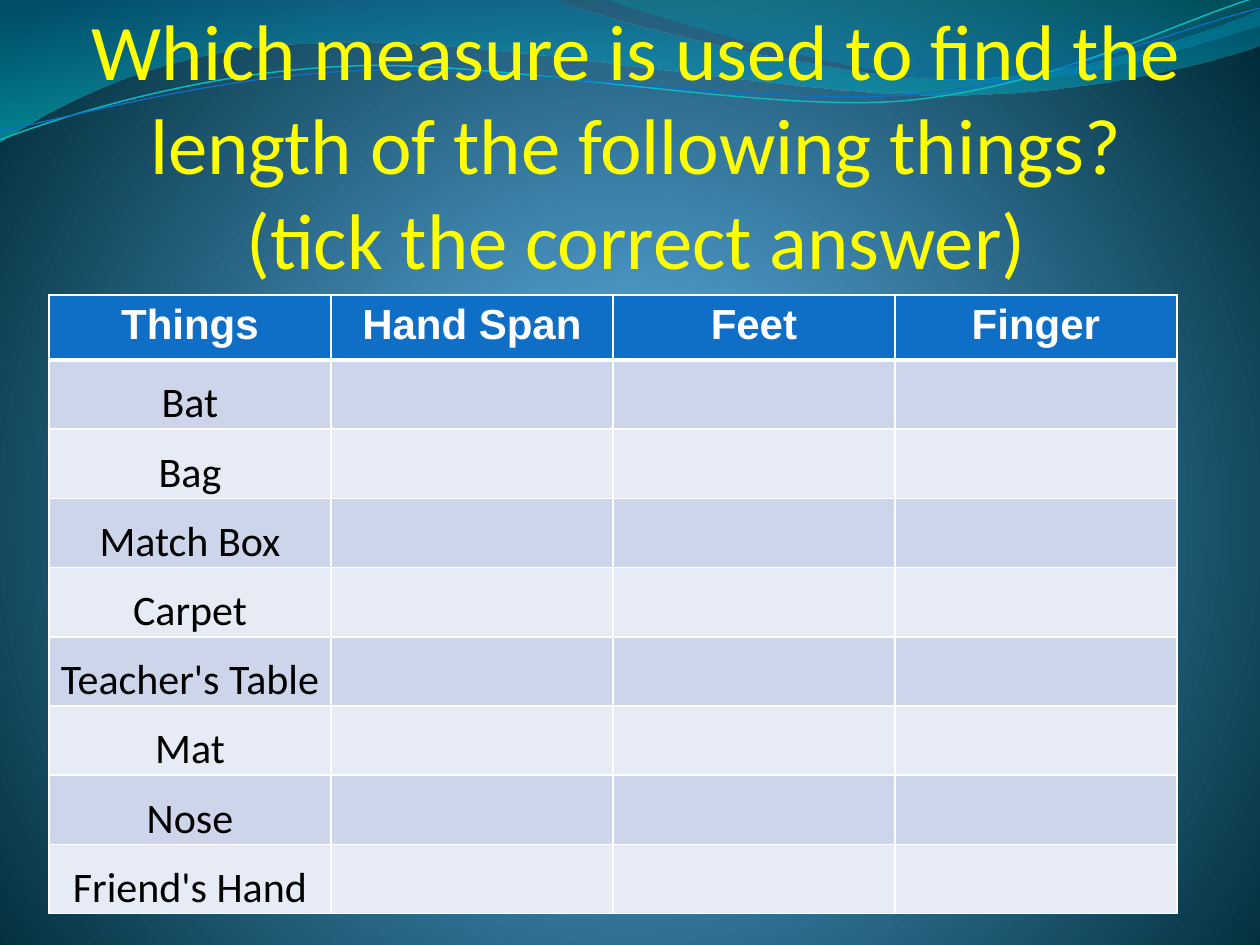
from pptx import Presentation
from pptx import util as u
from pptx.dml import color
from pptx.enum import text
from pptx.oxml import ns, parse_xml

COLORS = {
    "title": "FFFF00", "header": "0F6FC6", "odd": "CCD5EA", "even": "E7EBF5",
    "white": "FFFFFF", "black": "000000", "aqua": "0AB8BF", "blue": "0F6FC6",
    "glow": "4AA0D6", "mid": "4C98C7", "edge": "002C38",
    "band_top": "0074A1", "band_bottom": "00C6CF",
    "crest_top": "00A1A9", "crest_bottom": "008BBF",
}
PX = 914400 / 126
TILT = 357.3
DOWNWARD = '<a:lin ang="5400000" scaled="1"/>'
RADIAL = '<a:path path="circle"><a:fillToRect l="10000" t="110000" r="10000" b="100000"/></a:path>'


def px(length):
    return u.Emu(round(length * PX))


def rgb(name):
    return color.RGBColor.from_string(COLORS[name])


class Deck:
    def __init__(self, width, height):
        self.prs = Presentation()
        self.prs.slide_width, self.prs.slide_height = px(width), px(height)
        self.slide = self.prs.slides.add_slide(self.prs.slide_layouts[5])

    def gradient(self, fill_owner, root, stops, direction):
        fill_owner.fill.gradient()
        old = next(root.iter(ns.qn("a:gradFill")))
        stop_xml = "".join(
            f'<a:gs pos="{pos * 1000}"><a:srgbClr val="{COLORS[name]}">'
            f'<a:alpha val="{alpha * 1000}"/></a:srgbClr></a:gs>'
            for pos, name, alpha in stops)
        new = parse_xml(f'<a:gradFill {ns.nsdecls("a")} rotWithShape="1">'
                        f'<a:gsLst>{stop_xml}</a:gsLst>{direction}</a:gradFill>')
        old.getparent().replace(old, new)

    def background(self, stops):
        self.gradient(self.slide.background, self.slide.element, stops, RADIAL)

    def outline(self, start, segments, close):
        builder = self.slide.shapes.build_freeform(*map(px, start), scale=1.0)
        points = [(px(x), px(y)) for segment in segments for x, y in segment]
        builder.add_line_segments(points, close=close)
        wave = builder.convert_to_shape()
        wave.shadow.inherit = False
        steps = iter(list(wave.element.iter(ns.qn("a:lnTo"))))
        for segment in segments:
            parts = [next(steps) for _ in segment]
            if len(parts) == 3:
                curve = parse_xml(f'<a:cubicBezTo {ns.nsdecls("a")}/>')
                parts[0].addprevious(curve)
                for part in parts:
                    curve.append(part[0])
                    part.getparent().remove(part)
        return wave

    def band(self, start, segments, stops):
        wave = self.outline(start, segments, True)
        wave.line.fill.background()
        self.gradient(wave, wave.element, stops, DOWNWARD)

    def strand(self, start, segments, name, weight):
        wave = self.outline(start, segments, False)
        wave.rotation = TILT
        wave.fill.background()
        wave.line.color.rgb = rgb(name)
        wave.line.width = u.Pt(weight)

    def run(self, paragraph, words, size, font, name, bold=False):
        run = paragraph.add_run()
        run.text = words
        run.font.size, run.font.name, run.font.bold = u.Pt(size), font, bold
        run.font.color.rgb = rgb(name)

    def title(self, lines, left, top, width, height):
        title = self.slide.shapes.title
        title.element.getparent().append(title.element)
        title.left, title.top, title.width, title.height = map(px, (left, top, width, height))
        frame = title.text_frame
        frame.auto_size = text.MSO_AUTO_SIZE.NONE
        frame.word_wrap = True
        frame.vertical_anchor = text.MSO_ANCHOR.BOTTOM
        frame.margin_left = frame.margin_right = frame.margin_bottom = 0
        frame.margin_top = u.Inches(0.05)
        paragraph = frame.paragraphs[0]
        paragraph.alignment = text.PP_ALIGN.CENTER
        for index, line in enumerate(lines):
            if index:
                paragraph.add_line_break()
            self.run(paragraph, line, 45, "Calibri", "title")

    def borders(self, cell, top, bottom):
        properties = cell._tc.get_or_add_tcPr()
        for side, weight in (("L", 1), ("R", 1), ("T", top), ("B", bottom)):
            properties.append(parse_xml(
                f'<a:ln{side} {ns.nsdecls("a")} w="{u.Pt(weight)}"><a:solidFill>'
                f'<a:srgbClr val="{COLORS["white"]}"/></a:solidFill></a:ln{side}>'))

    def table(self, headings, things, left, top, column, header_height, body_height):
        frame = self.slide.shapes.add_table(
            len(things) + 1, len(headings), px(left), px(top),
            px(column * len(headings)), px(header_height + body_height))
        grid = frame.table
        for grid_column in grid.columns:
            grid_column.width = px(column)
        for index, row in enumerate(grid.rows):
            row.height = px(body_height / len(things) if index else header_height)
            fill = ("even", "odd")[index % 2] if index else "header"
            for cell in row.cells:
                self.borders(cell, 3 if index == 1 else 1, 1 if index else 3)
                cell.fill.solid()
                cell.fill.fore_color.rgb = rgb(fill)
        for cell, heading in zip(grid.rows[0].cells, headings):
            paragraph = cell.text_frame.paragraphs[0]
            paragraph.alignment = text.PP_ALIGN.CENTER
            self.run(paragraph, heading, 24, "Arial", "white", True)
        for index, thing in enumerate(things, 1):
            cell = grid.cell(index, 0)
            cell.vertical_anchor = text.MSO_ANCHOR.BOTTOM
            cell.margin_left = cell.margin_right = u.Inches(0.07)
            cell.margin_top = cell.margin_bottom = 0
            paragraph = cell.text_frame.paragraphs[0]
            paragraph.alignment = text.PP_ALIGN.CENTER
            paragraph.line_spacing = 1.15
            self.run(paragraph, thing, 24, "Calibri", "black")


def main():
    deck = Deck(1260, 945)
    deck.background([(0, "glow", 100), (25, "mid", 100), (100, "edge", 100)])
    deck.band((0, -1), [
        ((554, -1),),
        ((600, 21), (837, 79), (955, 79)),
        ((1075, 79), (1207, 33), (1260, 11)),
        ((1261, 45),),
        ((1239, 55), (1096, 96), (940, 95)),
        ((784, 95), (481, 35), (324, 43)),
        ((163, 44), (58, 105), (-1, 142)),
    ], [(0, "band_top", 45), (100, "band_bottom", 55)])
    deck.band((604, -1), [
        ((641, 14), (859, 78), (969, 82)),
        ((1079, 87), (1211, 40), (1260, 26)),
        ((1260, 0),),
    ], [(0, "crest_top", 30), (80, "crest_bottom", 45)])
    deck.strand((-2, 110), [
        ((59, 90), (199, 52), (349, 53)),
        ((499, 53), (745, 117), (896, 114)),
        ((1049, 109), (1184, 45), (1260, 27)),
    ], "aqua", 0.85)
    deck.strand((-2, 101), [
        ((57, 94), (207, 57), (357, 58)),
        ((509, 58), (750, 111), (902, 108)),
        ((1052, 104), (1187, 52), (1262, 38)),
    ], "blue", 0.75)
    deck.title(["Which measure is used to find the length of the following things?",
                "(tick the correct answer)"], 69, 128, 1134, 157)
    deck.table(["Things", "Hand Span", "Feet", "Finger"],
               ["Bat", "Bag", "Match Box", "Carpet", "Teacher's Table", "Mat",
                "Nose", "Friend's Hand"], 49, 295, 282, 65, 554)
    deck.prs.save("out.pptx")


if __name__ == "__main__":
    main()
